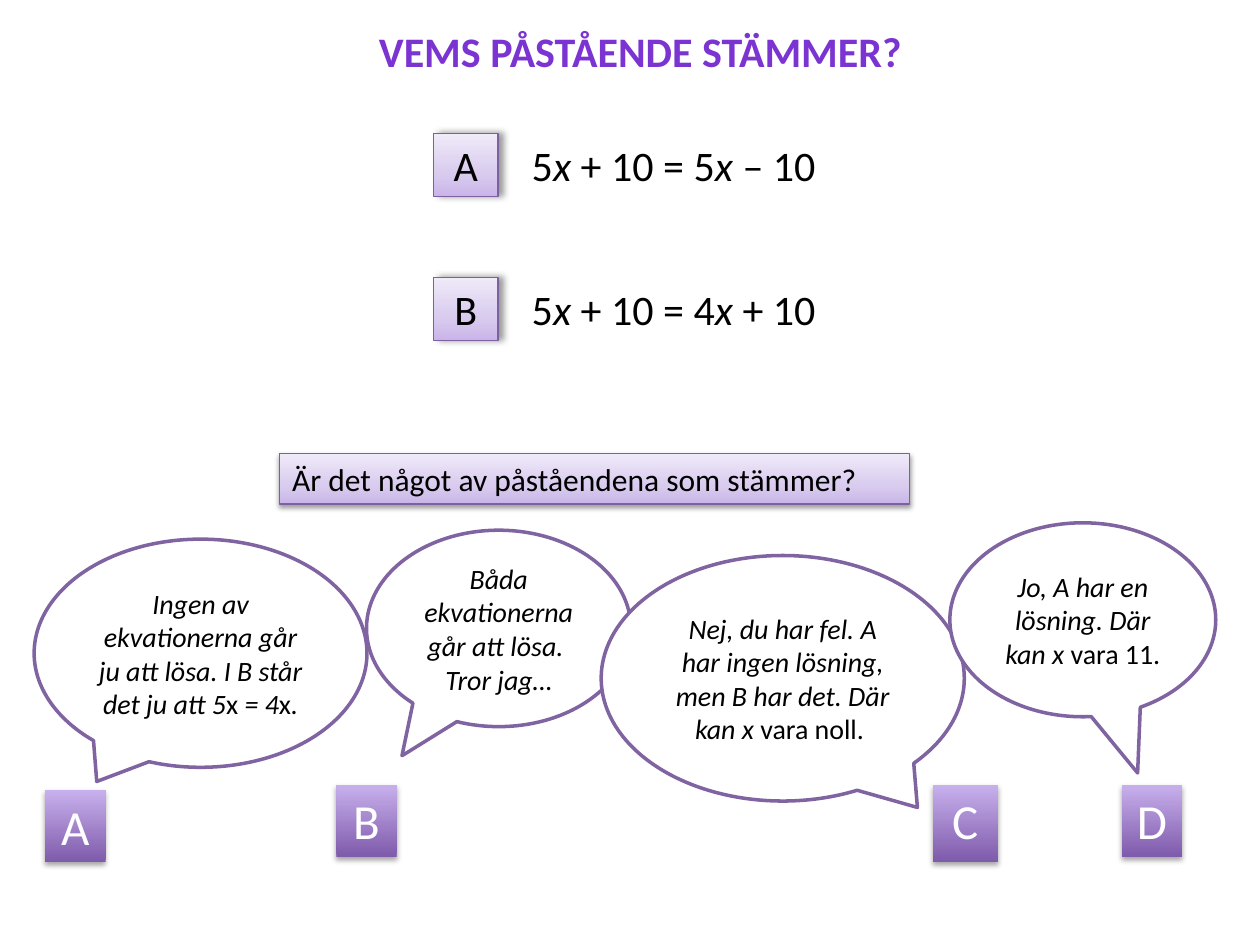
"""Build the slide that asks whose claim about two equations is true."""
from copy import deepcopy

from pptx import Presentation
from pptx import util as u
from pptx.dml.color import RGBColor
from pptx.enum import shapes, text
from pptx.oxml import parse_xml
from pptx.oxml.ns import nsdecls, qn

FONT = "Calibri"
BLACK, WHITE, TITLE_PURPLE = "000000", "FFFFFF", "7B34D2"
PALE = [(0, "C9B5E8"), (0.35, "D8CBEE"), (1, "F0EAF9")]
DARK = [(0, "7F5BAB"), (1, "C8B0ED")]
PALE_LINE, CALLOUT_LINE = "7D60A0", "8064A2"
SHADOW_BELOW, SHADOW_RIGHT = (35, 3.1, 1.8, 90), (40, 4, 3, 0)

TITLE = ("VEMS PÅSTÅENDE STÄMMER?", (7.39, 0.38, 12.34, 1.27))
QUESTION = ("Är det något av påståendena som stämmer?", (5.64, 9.14, 12.7, 1.02))
EQUATIONS = [("A", "5*x *+ 10 = 5*x *– 10"), ("B", "5*x *+ 10 = 4*x *+ 10")]
EQUATION_TOP, EQUATION_STEP = 2.69, 2.9
CLAIMS = [
    ("A", ["*Ingen av ekvationerna går ju att lösa. I B står det ju att 5*x *= 4*x*.*"],
     (0.69, 10.87, 6.71, 4.6), (-0.312, 0.562), (0.91, 15.93, 1.22, 1.45)),
    ("B", ["*Båda ekvationerna går att lösa. *", "*Tror jag…*"],
     (7.39, 10.69, 5.33, 3.96), (-0.366, 0.648), (6.78, 15.82, 1.22, 1.45)),
    ("C", ["*Nej, du har fel. A har ingen lösning, men B har det. Där kan x *vara noll. "],
     (12.12, 11.2, 7.32, 4.95), (0.371, 0.526), (18.8, 15.82, 1.32, 1.55)),
    ("D", ["*Jo, A har en lösning. Där kan x *vara 11."],
     (19.15, 10.54, 5.36, 3.91), (0.206, 0.79), (22.61, 15.82, 1.22, 1.45)),
]


def color(value):
    return RGBColor.from_string(value)


def write(shape, paragraphs, size, value=BLACK, bold=False, centered=False,
          anchor=text.MSO_ANCHOR.TOP, wrap=True):
    """Fill a shape with text in which asterisks switch italics on and off."""
    frame = shape.text_frame
    frame.word_wrap, frame.vertical_anchor = wrap, anchor
    for index, content in enumerate(paragraphs):
        paragraph = frame.add_paragraph() if index else frame.paragraphs[0]
        paragraph.alignment = text.PP_ALIGN.CENTER if centered else text.PP_ALIGN.LEFT
        font = paragraph.font
        font.name, font.size, font.bold = FONT, u.Pt(size), bold
        font.color.rgb = color(value)
        for part, piece in enumerate(content.split("*")):
            if piece:
                run = paragraph.add_run()
                run.text = piece
                run.font.italic = part % 2 == 1


def add_shape(slide, kind, box, line=None, width=0.75):
    shape = slide.shapes.add_shape(kind, *map(u.Cm, box))
    shape.shadow.inherit = False
    if line:
        shape.line.color.rgb = color(line)
        shape.line.width = u.Pt(width)
    else:
        shape.line.fill.background()
    return shape


def add_panel(slide, box, stops, shadow, line=None):
    """Add a rectangle with a vertical gradient and a soft shadow."""
    shape = add_shape(slide, shapes.MSO_SHAPE.RECTANGLE, box, line)
    shape.fill.gradient()
    shape.fill.gradient_angle = 90
    properties = shape._element.spPr
    stop_list = properties.find(".//" + qn("a:gsLst"))
    for _ in stops[2:]:
        stop_list.insert(1, deepcopy(stop_list[0]))
    for stop, (position, value) in zip(shape.fill.gradient_stops, stops):
        stop.position, stop.color.rgb = position, color(value)
    alpha, blur, distance, angle = shadow
    properties.find(qn("a:effectLst")).append(parse_xml(
        f'<a:outerShdw {nsdecls("a")} blurRad="{u.Pt(blur)}" dist="{u.Pt(distance)}" '
        f'dir="{angle * 60000}" rotWithShape="0"><a:srgbClr val="{BLACK}">'
        f'<a:alpha val="{alpha * 1000}"/></a:srgbClr></a:outerShdw>'))
    return shape


def main():
    presentation = Presentation()
    presentation.slide_width, presentation.slide_height = u.Cm(25.4), u.Cm(19.05)
    slide = presentation.slides.add_slide(presentation.slide_layouts[6])

    question, box = QUESTION
    write(add_panel(slide, box, PALE, (38, 3.1, 1.6, 90), PALE_LINE), [question], 18)

    for letter, claim, box, tip, badge_box in CLAIMS:
        callout = add_shape(slide, shapes.MSO_SHAPE.OVAL_CALLOUT, box, CALLOUT_LINE, 2)
        callout.fill.solid()
        callout.fill.fore_color.rgb = color(WHITE)
        callout.adjustments[0], callout.adjustments[1] = tip
        write(callout, claim, 16, centered=True, anchor=text.MSO_ANCHOR.MIDDLE)
        badge = add_panel(slide, badge_box, DARK, SHADOW_BELOW)
        write(badge, [letter], 28, WHITE, centered=True)

    title, box = TITLE
    write(slide.shapes.add_textbox(*map(u.Cm, box)), [title], 24, TITLE_PURPLE, bold=True)

    for index, (letter, equation) in enumerate(EQUATIONS):
        top = EQUATION_TOP + index * EQUATION_STEP
        badge = add_panel(slide, (8.74, top, 1.3, 1.27), PALE, SHADOW_RIGHT, PALE_LINE)
        write(badge, [letter], 24, centered=True)
        label = slide.shapes.add_textbox(*map(u.Cm, (10.47, top, 6.3, 1.27)))
        write(label, [equation], 24, wrap=False)

    presentation.save("out.pptx")


if __name__ == "__main__":
    main()
